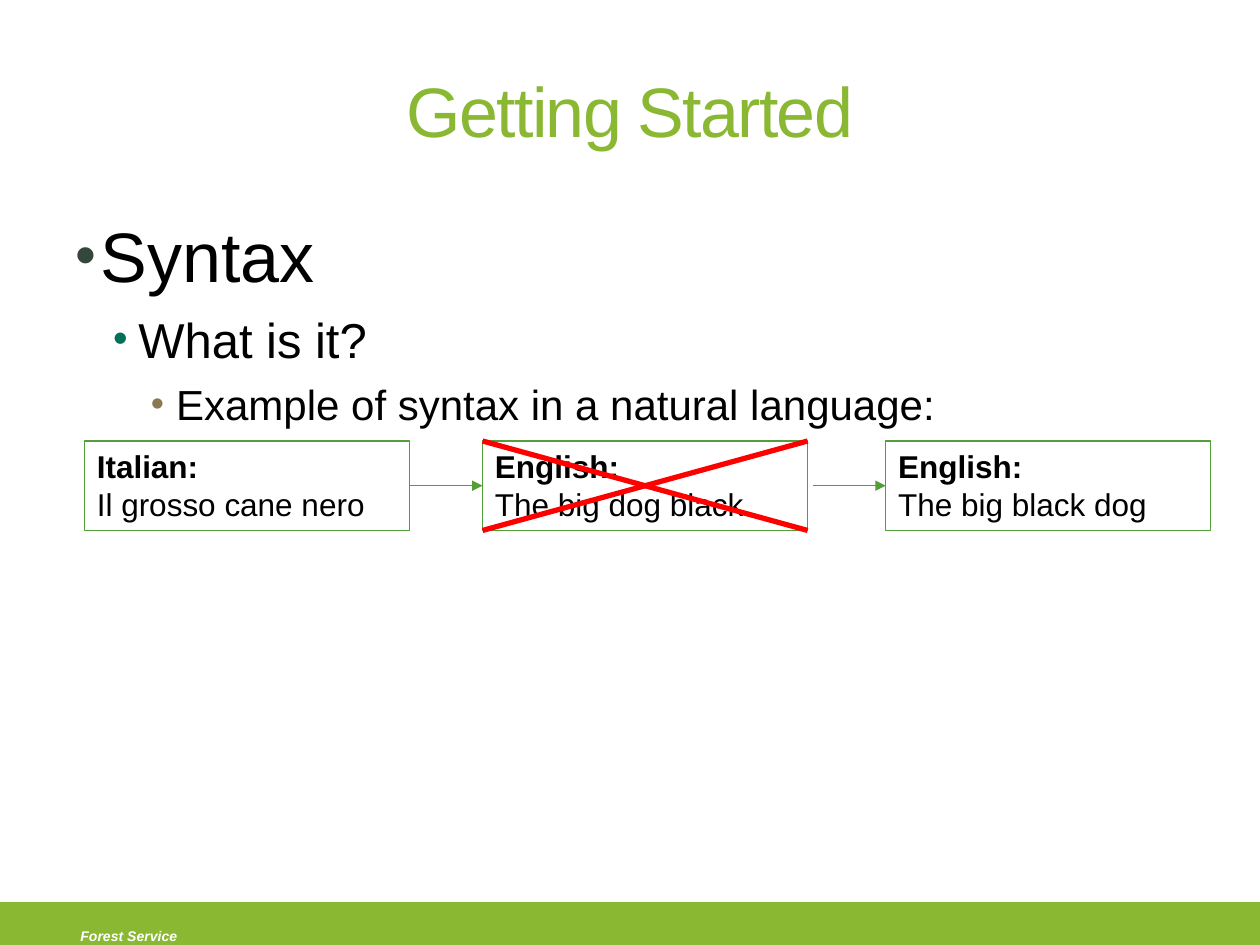
from dataclasses import dataclass

from lxml import etree
from pptx import Presentation
from pptx import util as u
from pptx.dml.color import RGBColor
from pptx.enum import shapes, text
from pptx.oxml.ns import qn


@dataclass(frozen=True)
class Theme:
    """Colours, type sizes and line widths of the deck."""
    font: str = "Arial"
    lime: str = "8AB833"
    green: str = "549E39"
    red: str = "FF0000"
    ink: str = "000000"
    white: str = "FFFFFF"
    title: int = 40
    card: int = 18
    footer: int = 8
    thin: float = 0.75
    thick: float = 3


THEME = Theme()
WIDTH, HEIGHT = 10, 7.5
CARD_LEFTS = (0.67, 3.83, 7.03)
CARD_TOP, CARD_WIDTH, CARD_HEIGHT = 3.5, 2.58, 0.71
ARROW_LENGTH = 0.58
CARDS = (
    ("Italian:", "Il grosso cane nero"),
    ("English:", "The big dog black"),
    ("English:", "The big black dog"),
)
OUTLINE = (
    ("Syntax", 40, 0.2, 0, "34473D", 85),
    ("What is it?", 28, 0.5, 7, "017058", 85),
    ("Example of syntax in a natural language:", 24, 0.8, 6, "887952", 90),
)


def inches(*lengths):
    """Turn numbers into slide lengths."""
    return [u.Inches(length) for length in lengths]


def apply(target, **values):
    """Set each named attribute on the target."""
    for name, value in values.items():
        setattr(target, name, value)


def add_span(para, words, size, color, **style):
    """Append one formatted run to a paragraph."""
    span = para.add_run()
    span.text = words
    apply(span.font, name=THEME.font, size=u.Pt(size), **style)
    span.font.color.rgb = RGBColor.from_string(color)
    return span


def set_line(shape, color, width):
    """Give a shape or connector a solid line."""
    shape.line.color.rgb = RGBColor.from_string(color)
    shape.line.width = u.Pt(width)


def add_rectangle(page, left, top, width, height):
    """Add a rectangle without shadow or fill."""
    box = page.shapes.add_shape(
        shapes.MSO_SHAPE.RECTANGLE, *inches(left, top, width, height))
    box.shadow.inherit = False
    box.fill.background()
    return box


def add_footer(page):
    """Add the coloured band and its label."""
    band = add_rectangle(page, 0, 7.17, WIDTH, 0.36)
    band.fill.solid()
    band.fill.fore_color.rgb = RGBColor.from_string(THEME.lime)
    set_line(band, THEME.lime, 2.08)
    box = page.shapes.add_textbox(*inches(0.54, 7.31, 2.04, 0.24))
    box.text_frame.word_wrap = True
    add_span(box.text_frame.paragraphs[0], "Forest Service",
             THEME.footer, THEME.white, bold=True, italic=True)


def add_title(page, words):
    """Place and format the title placeholder."""
    title = page.shapes.title
    left, top, width, height = inches(0.5, 0.33, 9, 1.08)
    apply(title, left=left, top=top, width=width, height=height)
    apply(title.text_frame, word_wrap=True,
          vertical_anchor=text.MSO_ANCHOR.MIDDLE)
    para = title.text_frame.paragraphs[0]
    para.alignment = text.PP_ALIGN.CENTER
    span = add_span(para, words, THEME.title, THEME.lime)
    span.font._element.set("spc", "-100")


def add_bullet(para, indent, color, percent):
    """Give a paragraph a hanging coloured bullet."""
    props = para._p.get_or_add_pPr()
    props.set("marL", str(u.Inches(indent)))
    props.set("indent", str(u.Inches(-0.2)))
    tint = etree.SubElement(props, qn("a:buClr"))
    etree.SubElement(tint, qn("a:srgbClr"), val=color)
    etree.SubElement(props, qn("a:buSzPct"), val=str(percent * 1000))
    etree.SubElement(props, qn("a:buFont"), typeface=THEME.font)
    etree.SubElement(props, qn("a:buChar"), char="•")


def add_outline(page):
    """Add the three-level bullet list."""
    box = page.shapes.add_textbox(*inches(0.5, 1.58, 9.33, 3.5))
    frame = box.text_frame
    apply(frame, word_wrap=True, margin_top=u.Inches(0.11))
    for level, (words, size, indent, gap, color, percent) in enumerate(OUTLINE):
        para = frame.add_paragraph() if level else frame.paragraphs[0]
        add_bullet(para, indent, color, percent)
        apply(para, level=level, space_before=u.Pt(gap))
        add_span(para, words, size, THEME.ink)


def add_card(page, left, heading, sentence):
    """Add an outlined box with a language and a sentence."""
    box = add_rectangle(page, left, CARD_TOP, CARD_WIDTH, CARD_HEIGHT)
    set_line(box, THEME.green, THEME.thin)
    frame = box.text_frame
    apply(frame, word_wrap=True, vertical_anchor=text.MSO_ANCHOR.TOP)
    paras = frame.paragraphs[0], frame.add_paragraph()
    for para, words, bold in zip(paras, (heading, sentence), (True, False)):
        para.alignment = text.PP_ALIGN.LEFT
        add_span(para, words, THEME.card, THEME.ink, bold=bold)


def add_line(page, start, end, color, width, arrow=False):
    """Add a straight connector, with an arrowhead if asked."""
    line = page.shapes.add_connector(
        shapes.MSO_CONNECTOR.STRAIGHT, *inches(*start, *end))
    set_line(line, color, width)
    if arrow:
        etree.SubElement(line.line._get_or_add_ln(), qn("a:tailEnd"),
                         type="triangle")
    etree.SubElement(line._element.spPr, qn("a:effectLst"))


def add_cross(page, left):
    """Strike out the card at the given left edge."""
    right, bottom = left + CARD_WIDTH, CARD_TOP + CARD_HEIGHT
    for start, end in ((CARD_TOP, bottom), (bottom, CARD_TOP)):
        add_line(page, (left, start), (right, end), THEME.red, THEME.thick)


def main():
    """Build and save the slide."""
    deck = Presentation()
    deck.slide_width, deck.slide_height = inches(WIDTH, HEIGHT)
    page = deck.slides.add_slide(deck.slide_layouts[5])
    add_footer(page)
    add_title(page, "Getting Started")
    add_outline(page)
    for left, card in zip(CARD_LEFTS, CARDS):
        add_card(page, left, *card)
    middle = CARD_TOP + CARD_HEIGHT / 2
    for left in CARD_LEFTS[1:]:
        add_line(page, (left - ARROW_LENGTH, middle), (left, middle),
                 THEME.green, THEME.thin, arrow=True)
    add_cross(page, CARD_LEFTS[1])
    deck.save("out.pptx")


if __name__ == "__main__":
    main()
